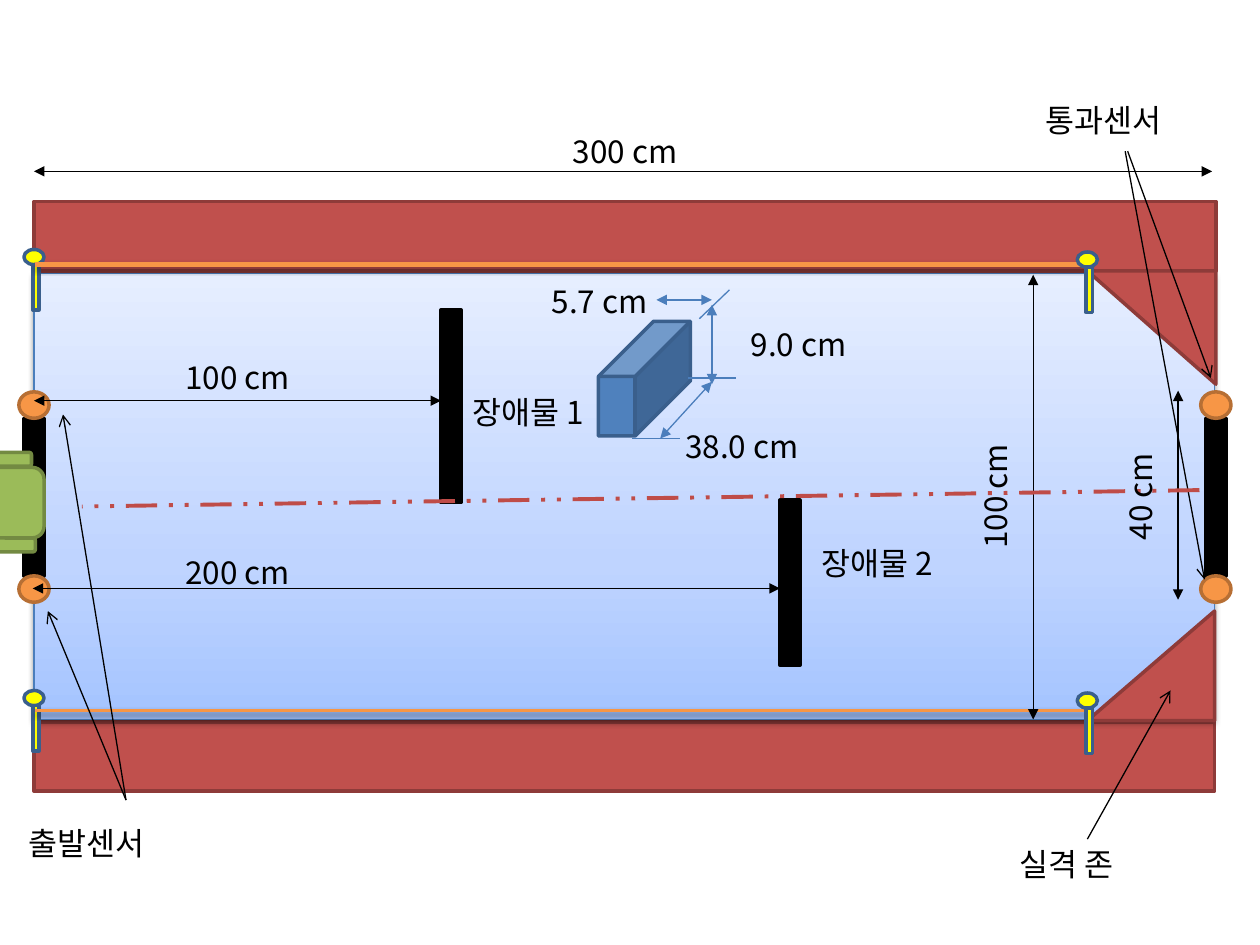
from copy import deepcopy
from itertools import product

from pptx import Presentation
from pptx.dml.color import RGBColor
from pptx.enum.dml import MSO_LINE
from pptx.enum.shapes import MSO_CONNECTOR, MSO_SHAPE
from pptx.enum.text import MSO_AUTO_SIZE, PP_ALIGN
from pptx.oxml import parse_xml
from pptx.oxml.ns import nsdecls, qn
from pptx.util import Cm, Pt

# Content: all positions and sizes are in inches, line widths in points
FONT = "Noto Sans CJK KR"
RED = ("C0504D", "8E3B39", 2)
BLACK = ("000000", "000000", 2)
ORANGE = ("F79646", "B76F34", 2)
GREEN = ("9BBB59", "738A42", 2)
YELLOW = ("FFFF00", "3A5F8C", 2)
BLUE = ("4F81BD", "3A5F8C", 2)
INK, EDGE = "000000", "4B7EBC"

FIELD = (0.27, 2.17, 9.37, 3.54)
FIELD_STOPS = [(0, "A4C4FF"), (0.35, "BFD4FF"), (1, "E6EEFF")]
WALLS = [(0.27, 1.6, 9.38, 0.55), (0.27, 5.73, 9.37, 0.55)]
OBSTACLES = [(3.5, 2.46, 0.16, 1.53), (6.19, 3.97, 0.16, 1.31)]
GATE_CENTRES = [0.27, 9.65]
GATE_TOP, GATE_HEIGHT, GATE_WIDTH = 3.32, 1.25, 0.16
SENSOR_WIDTH, SENSOR_HEIGHT = 0.24, 0.21
CAR = [(-0.71, 3.71, 1.06, 0.56), (-0.06, 3.59, 0.31, 0.11), (-0.03, 4.27, 0.31, 0.11)]
FOUL_ZONES = [((8.63, 4.85, 1.01, 0.87), ["flipH"]),
              ((8.63, 2.15, 1.02, 0.9), ["flipH", "flipV"])]
ARENA_DIMENSIONS = [  # both ends have a triangle
    ((0.27, 1.36), (9.62, 1.36)), ((8.2, 2.18), (8.2, 5.71)), ((9.35, 3.1), (9.35, 4.76)),
    ((0.27, 3.18), (3.5, 3.18)), ((0.26, 4.67), (6.19, 4.67)),
]
BLOCK_DIMENSIONS = [
    ((5.24, 3.48), (5.65, 3.03)), ((5.65, 2.42), (5.65, 3.05)), ((5.21, 2.38), (5.65, 2.38)),
]
EXTENSIONS = [((5.55, 2.53), (5.79, 2.3)), ((5.46, 3), (5.84, 3)), ((5.02, 3.48), (5.4, 3.48))]
POINTERS = [((8.63, 6.66), (9.29, 5.48)), ((1, 6.35), (0.38, 4.85)), ((1, 6.35), (0.5, 3.29))]
FINISH_POINTERS = [((8.95, 1.2), (9.61, 3)), ((8.93, 1.2), (9.56, 4.6))]
ROPES = [  # y, width, shadow opacity, shadow distance, left post top, right post top
    (5.64, 2, 38, 1.6, 5.48, 5.5),
    (2.1, 3, 35, 1.8, 1.98, 2),
]
CENTRED_LABELS = [  # text, left, top, width, rotation
    ("300 cm", 0.27, 1, 9.38, 0),
    ("100 cm", 6.13, 3.74, 3.54, 270), ("40 cm", 8.23, 3.74, 1.63, 270),
    ("100 cm", 0.26, 2.79, 3.25, 0), ("200 cm", 0.26, 4.34, 3.25, 0),
]
LABELS = [  # text, left, top, width
    ("통과센서", 8.2, 0.75, 1.21), ("출발센서", 0.13, 6.49, 1.21), ("실격 존", 7.99, 6.66, 1.05),
    ("장애물 1", 3.65, 3.07, 1.19), ("장애물 2", 6.42, 4.27, 1.19),
    ("38.0 cm", 5.34, 3.34, 1.1), ("9.0 cm", 5.86, 2.53, 0.97), ("5.7 cm", 4.28, 2.19, 0.97),
]
LABEL_HEIGHT = 0.4


def lengths(*inches):
    return [Cm(value * 2.54) for value in inches]


def colour(hex_text):
    return RGBColor.from_string(hex_text)


def set_values(target, values):
    for name, value in values.items():
        setattr(target, name, value)


def add_effects(item, opacity=0, distance=0):
    """Add a soft shadow below the item, or an empty effect list."""
    shadow = (
        f'<a:outerShdw blurRad="{Pt(3.1)}" dist="{Pt(distance)}" dir="5400000" rotWithShape="0">'
        f'<a:srgbClr val="000000"><a:alpha val="{opacity * 1000}"/></a:srgbClr></a:outerShdw>'
    )
    effects = f"<a:effectLst {nsdecls('a')}>{shadow if opacity else ''}</a:effectLst>"
    item._element.spPr.append(parse_xml(effects))


def add_box(container, kind, box, style, flips=()):
    fill, line, width = style
    shape = container.add_shape(kind, *lengths(*box))
    shape.fill.solid()
    shape.fill.fore_color.rgb = colour(fill)
    shape.line.color.rgb = colour(line)
    shape.line.width = Pt(width)
    shape.shadow.inherit = False
    for flip in flips:
        shape._element.spPr.find(qn("a:xfrm")).set(flip, "1")
    return shape


def add_line(container, start, end, ink, width=0.75, head=None, tail=None, dash=None, shadow=(0, 0)):
    line = container.add_connector(MSO_CONNECTOR.STRAIGHT, *lengths(*start, *end))
    line.line.color.rgb = colour(ink)
    line.line.width = Pt(width)
    if dash:
        line.line.dash_style = dash
    for tag, arrow in (("headEnd", head), ("tailEnd", tail)):
        if arrow:
            outline = line._element.spPr.find(qn("a:ln"))
            outline.append(parse_xml(f'<a:{tag} {nsdecls("a")} type="{arrow}"/>'))
    add_effects(line, *shadow)


def add_label(container, text, left, top, width, rotation=0, centred=False):
    box = container.add_textbox(*lengths(left, top, width, LABEL_HEIGHT))
    box.rotation = rotation
    set_values(box.text_frame, {"word_wrap": centred, "auto_size": MSO_AUTO_SIZE.SHAPE_TO_FIT_TEXT})
    paragraph = box.text_frame.paragraphs[0]
    paragraph.alignment = PP_ALIGN.CENTER if centred else PP_ALIGN.LEFT
    run = paragraph.add_run()
    run.text = text
    set_values(run.font, {"size": Pt(18), "name": FONT})
    run.font.color.rgb = colour(INK)
    run._r.get_or_add_rPr().append(parse_xml(f'<a:ea {nsdecls("a")} typeface="{FONT}"/>'))


def add_field(container):
    field = add_box(container, MSO_SHAPE.RECTANGLE, FIELD, ("FFFFFF", EDGE, 0.75))
    field.shadow.inherit = True
    field.fill.gradient()
    field.fill.gradient_angle = 90
    stop_list = field._element.spPr.find(qn("a:gradFill")).find(qn("a:gsLst"))
    stop_list.append(deepcopy(stop_list[0]))
    for stop, (position, ink) in zip(field.fill.gradient_stops, FIELD_STOPS):
        stop.position = position
        stop.color.rgb = colour(ink)
    add_effects(field, 38, 1.6)


def add_post(container, left, top):
    add_box(container, MSO_SHAPE.OVAL, (left, top, 0.16, 0.12), YELLOW)
    add_box(container, MSO_SHAPE.RECTANGLE, (left + 0.07, top + 0.12, 0.05, 0.36), YELLOW)


def main():
    presentation = Presentation()
    set_values(presentation, {"slide_width": Cm(25.4), "slide_height": Cm(19.05)})
    shapes = presentation.slides.add_slide(presentation.slide_layouts[6]).shapes

    # Arena, obstacles and foul zones
    for box in WALLS:
        add_box(shapes, MSO_SHAPE.RECTANGLE, box, RED)
    add_field(shapes)
    for box in OBSTACLES:
        add_box(shapes, MSO_SHAPE.RECTANGLE, box, BLACK)
    for box, flips in FOUL_ZONES:
        add_box(shapes, MSO_SHAPE.RIGHT_TRIANGLE, box, RED, flips)

    # Start and finish gates, each with a sensor at both ends
    for centre in GATE_CENTRES:
        gate = (centre - GATE_WIDTH / 2, GATE_TOP, GATE_WIDTH, GATE_HEIGHT)
        add_box(shapes, MSO_SHAPE.RECTANGLE, gate, BLACK)
    for centre, top in product(GATE_CENTRES, (GATE_TOP - SENSOR_HEIGHT, GATE_TOP + GATE_HEIGHT)):
        sensor = (centre - SENSOR_WIDTH / 2, top, SENSOR_WIDTH, SENSOR_HEIGHT)
        add_box(shapes, MSO_SHAPE.OVAL, sensor, ORANGE)

    # Car waiting at the start
    car = shapes.add_group_shape().shapes
    for box in CAR:
        add_box(car, MSO_SHAPE.ROUNDED_RECTANGLE, box, GREEN)

    # Ropes between posts
    for y, width, opacity, distance, left_top, right_top in ROPES:
        add_post(shapes, 0.19, left_top)
        add_line(shapes, (0.28, y), (8.63, y), "F79646", width, shadow=(opacity, distance))
        add_post(shapes, 8.55, right_top)

    # Obstacle block, dimensions, pointers and driving line
    cube = add_box(shapes, MSO_SHAPE.CUBE, (4.75, 2.55, 0.73, 0.91), BLUE)
    cube.adjustments[0] = 0.6
    for dimensions, ink in ((ARENA_DIMENSIONS, INK), (BLOCK_DIMENSIONS, EDGE)):
        for start, end in dimensions:
            add_line(shapes, start, end, ink, head="triangle", tail="triangle")
    for start, end in EXTENSIONS:
        add_line(shapes, start, end, EDGE)
    finish_group = shapes.add_group_shape().shapes
    for container, pointers in ((shapes, POINTERS), (finish_group, FINISH_POINTERS)):
        for start, end in pointers:
            add_line(container, start, end, INK, tail="arrow")
    add_line(shapes, (9.52, 3.89), (0.65, 4.02), "BF4C48", 2.25, dash=MSO_LINE.DASH_DOT_DOT)

    # Labels
    for label in CENTRED_LABELS:
        add_label(shapes, *label, centred=True)
    for label in LABELS:
        add_label(shapes, *label)

    presentation.save("out.pptx")


if __name__ == "__main__":
    main()
